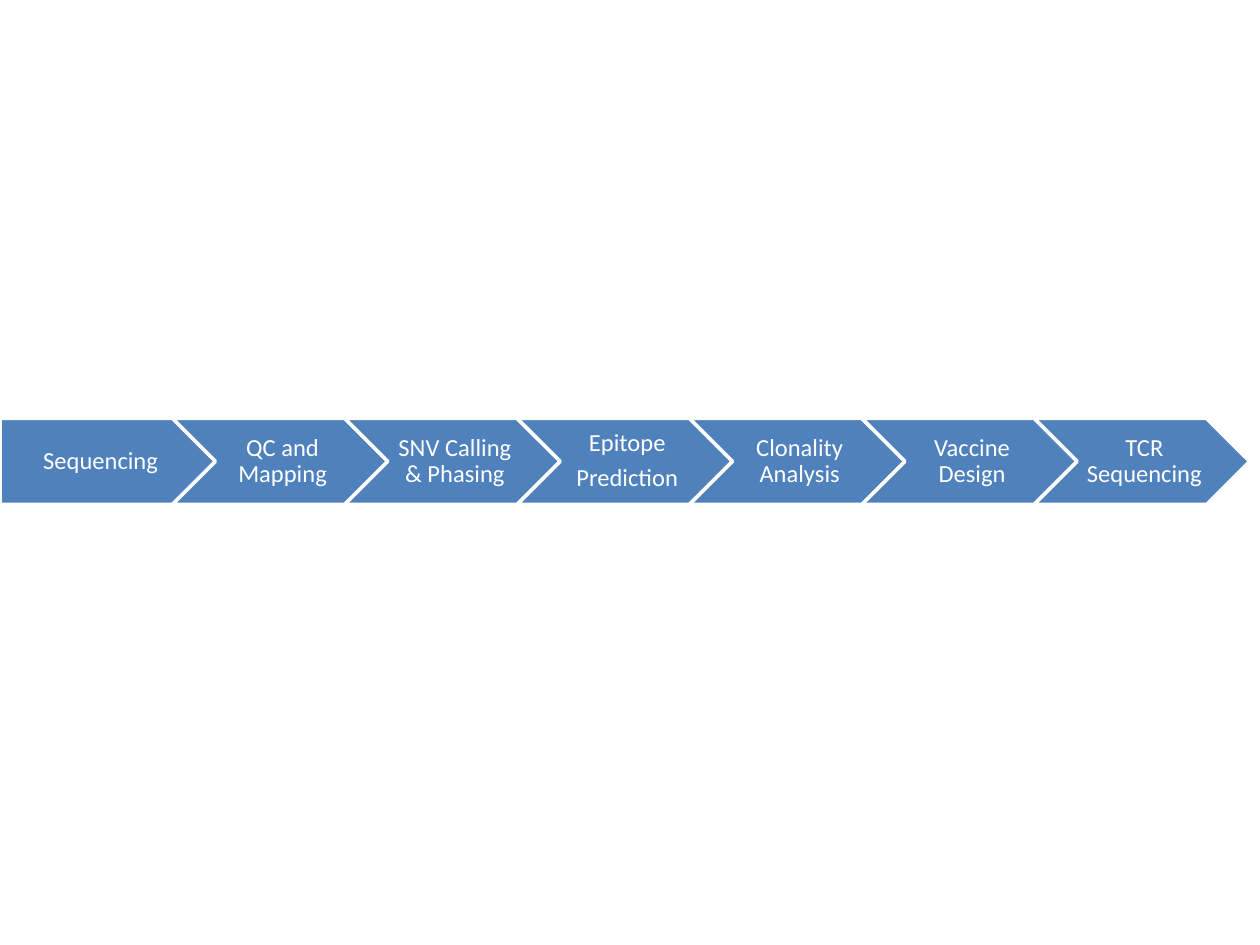
"""Build a slide with a seven-step vaccine pipeline drawn as a row of chevrons."""
import pptx
import pptx.dml.color
import pptx.enum.shapes
import pptx.enum.text
import pptx.util

Inches = pptx.util.Inches
Pt = pptx.util.Pt
Shape = pptx.enum.shapes.MSO_SHAPE

STEPS = [
    ["Sequencing"],
    ["QC and Mapping"],
    ["SNV Calling & Phasing"],
    ["Epitope", "Prediction"],
    ["Clonality Analysis"],
    ["Vaccine Design"],
    ["TCR Sequencing"],
]
BLUE, WHITE = "4F81BD", "FFFFFF"
TOP, WIDTH = 3.32, 1.71
HEIGHT = 0.4 * WIDTH
PITCH = 0.8 * WIDTH


def color(value):
    return pptx.dml.color.RGBColor.from_string(value)


def add_step(slide, index, lines):
    kind = Shape.CHEVRON if index else Shape.PENTAGON
    shape = slide.shapes.add_shape(
        kind, Inches(index * PITCH), Inches(TOP), Inches(WIDTH), Inches(HEIGHT)
    )
    shape.shadow.inherit = False
    shape.fill.solid()
    shape.fill.fore_color.rgb = color(BLUE)
    shape.line.color.rgb = color(WHITE)
    shape.line.width = Pt(2)

    frame = shape.text_frame
    frame.word_wrap = True
    frame.vertical_anchor = pptx.enum.text.MSO_ANCHOR.MIDDLE
    frame.margin_left = Inches(0.06 if index else 0.08)
    frame.margin_right = Inches(0.02)
    frame.margin_top = frame.margin_bottom = Inches(0.04)
    for number, line in enumerate(lines):
        paragraph = frame.add_paragraph() if number else frame.paragraphs[0]
        paragraph.alignment = pptx.enum.text.PP_ALIGN.CENTER
        paragraph.line_spacing = 0.9
        paragraph.space_after = Pt(4.9)
        run = paragraph.add_run()
        run.text = line
        run.font.name = "Calibri"
        run.font.size = Pt(14)
        run.font.color.rgb = color(WHITE)


def main():
    presentation = pptx.Presentation()
    presentation.slide_width = Inches(10)
    presentation.slide_height = Inches(7.5)
    slide = presentation.slides.add_slide(presentation.slide_layouts[6])
    for index, lines in enumerate(STEPS):
        add_step(slide, index, lines)
    presentation.save("out.pptx")


if __name__ == "__main__":
    main()
